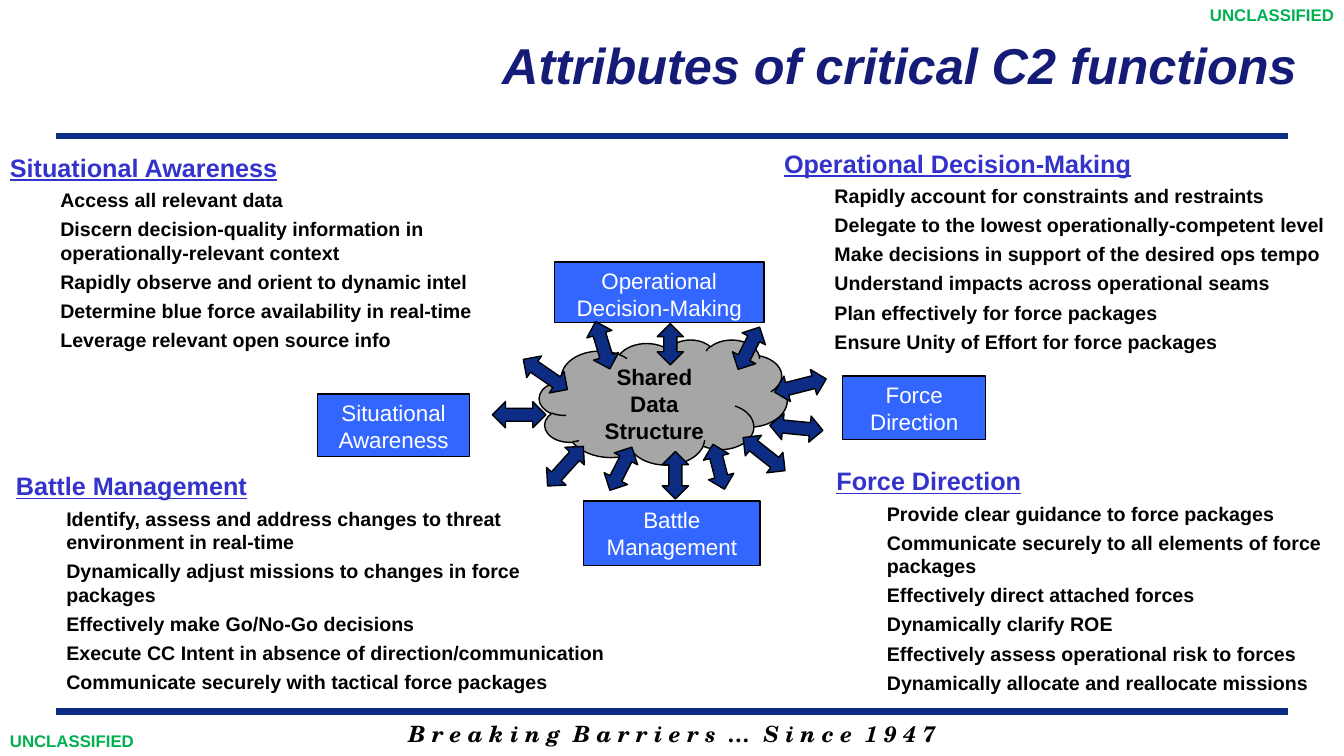
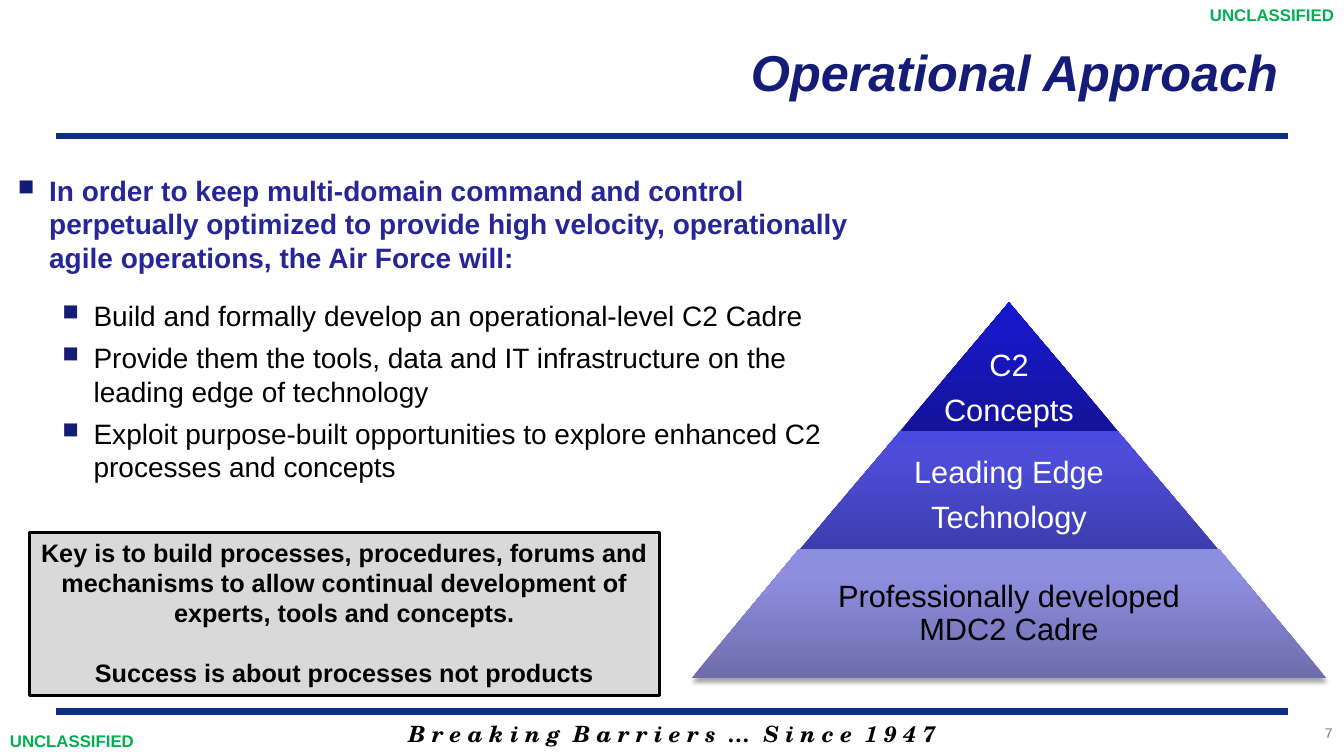
import copy
from dataclasses import dataclass

import pptx
import pptx.dml.color
import pptx.enum.shapes
import pptx.enum.text
import pptx.oxml
import pptx.oxml.ns
import pptx.util
from lxml import etree

RGBColor = pptx.dml.color.RGBColor
Shape = pptx.enum.shapes.MSO_SHAPE
Align = pptx.enum.text.PP_ALIGN
Anchor = pptx.enum.text.MSO_ANCHOR
Pt = pptx.util.Pt
qn = pptx.oxml.ns.qn

# Shared colours and fonts
BLACK = RGBColor(0x00, 0x00, 0x00)
WHITE = RGBColor(0xFF, 0xFF, 0xFF)
NAVY = RGBColor(0x0C, 0x2D, 0x83)
TITLE_BLUE = RGBColor(0x15, 0x1C, 0x77)
LEAD_BLUE = RGBColor(0x26, 0x26, 0x99)
HEADING_BLUE = RGBColor(0x33, 0x33, 0xCC)
BOX_BLUE = RGBColor(0x33, 0x66, 0xFF)
GREEN = RGBColor(0x00, 0xB0, 0x50)
CLOUD_GRAY = RGBColor(0xA6, 0xA6, 0xA6)
KEY_GRAY = RGBColor(0xD9, 0xD9, 0xD9)
NUMBER_GRAY = RGBColor(0x80, 0x80, 0x80)
SANS = "Arial"
SERIF = "TeX Gyre Schola"

# Grid of 80 columns by 45 rows of square cells
COLS, ROWS = 80, 45
CELL = pptx.util.Inches(1) / 6


@dataclass(frozen=True)
class Area:
    col: float
    row: float
    cols: float
    rows: float

    def emu(self) -> tuple[int, ...]:
        return tuple(cells(v) for v in (self.col, self.row, self.cols, self.rows))


@dataclass(frozen=True)
class Style:
    size: float
    color: RGBColor = BLACK
    bold: bool = False
    italic: bool = False
    underline: bool = False
    font: str = SANS
    align: Align = Align.LEFT


@dataclass(frozen=True)
class Para:
    text: str
    style: Style
    before: float = 0
    spacing: float = 1.0
    left: float = 0
    bullet: bool = False


@dataclass(frozen=True)
class Node:
    lines: tuple[str, ...]
    area: Area
    fill: RGBColor = BOX_BLUE
    shape: Shape = Shape.RECTANGLE
    style: Style = Style(16, WHITE, align=Align.CENTER)


@dataclass(frozen=True)
class Arrow:
    col: float  # centre
    row: float
    length: float
    angle: float


@dataclass(frozen=True)
class Topic:
    heading: str
    area: Area
    items: tuple[str, ...]


@dataclass(frozen=True)
class Tier:
    lines: tuple[str, ...]
    row: float
    half_top: float
    half_base: float
    inset: float
    stops: tuple[str, str, str]
    color: RGBColor = WHITE
    anchor: Anchor = Anchor.MIDDLE


TITLE = Style(36, TITLE_BLUE, bold=True, italic=True, align=Align.RIGHT)
HEADING = Style(18, HEADING_BLUE, bold=True, underline=True)
ITEM = Style(14, bold=True)
LEAD = Style(20, LEAD_BLUE, bold=True)
POINT = Style(20)
KEY = Style(18, bold=True, align=Align.CENTER)
MOTTO = Style(16, bold=True, italic=True, font=SERIF, align=Align.CENTER)

NODES = (
    Node(("Battle Management",), Area(34.74, 29.82, 10.5, 3.84)),
    Node(("Shared", "Data Structure"), Area(32.1, 20.22, 14.76, 7.44), CLOUD_GRAY,
         Shape.CLOUD, Style(16, bold=True, align=Align.CENTER)),
    Node(("Situational", "Awareness"), Area(18.9, 23.46, 9.06, 3.72)),
    Node(("Operational", "Decision-Making"), Area(33, 15.6, 12.48, 3.6)),
    Node(("Force", "Direction"), Area(50.16, 22.38, 8.52, 3.78)),
)

ARROW_WIDTH = 1.56
ARROWS = (
    Arrow(33.66, 27.75, 3.18, 42.1), Arrow(39.9, 20.49, 2.46, 0),
    Arrow(35.88, 20.55, 2.94, 343.2), Arrow(32.46, 22.29, 3.18, 124.4),
    Arrow(47.64, 22.95, 3.18, 75.7), Arrow(47.4, 25.47, 3.18, 95.5),
    Arrow(45.48, 27.03, 3.18, 128.3), Arrow(42.78, 27.78, 2.76, 165.6),
    Arrow(36.96, 27.9, 2.88, 27), Arrow(30.9, 24.69, 3.18, 90),
    Arrow(40.2, 28.29, 2.82, 180), Arrow(44.58, 20.73, 2.82, 27),
)

TOPICS = (
    Topic("Situational Awareness", Area(0, 8.76, 32.28, 12.66), (
        "Access all relevant data",
        "Discern decision-quality information in operationally-relevant context",
        "Rapidly observe and orient to dynamic intel",
        "Determine blue force availability in real-time",
        "Leverage relevant open source info")),
    Topic("Operational Decision-Making", Area(46.08, 8.52, 33.92, 13.02), (
        "Rapidly account for constraints and restraints",
        "Delegate to the lowest operationally-competent level",
        "Make decisions in support of the desired ops tempo",
        "Understand impacts across operational seams",
        "Plan effectively for force packages",
        "Ensure Unity of Effort for force packages")),
    Topic("Force Direction", Area(49.2, 27.42, 30.8, 14.46), (
        "Provide clear guidance to force packages",
        "Communicate securely to all elements of force packages",
        "Effectively direct attached forces",
        "Dynamically clarify ROE",
        "Effectively assess operational risk to forces",
        "Dynamically allocate and reallocate missions")),
    Topic("Battle Management", Area(0.36, 27.72, 36.6, 14.1), (
        "Identify, assess and address changes to threat environment in real-time",
        "Dynamically adjust missions to changes in force packages",
        "Effectively make Go/No-Go decisions",
        "Execute CC Intent in absence of direction/communication",
        "Communicate securely with tactical force packages")),
)

TIER_CENTER, TIER_ROWS = 60.06, 7.68
TIERS = (
    Tier(("C2", "Concepts"), 18, 0, 6.5, 0.18, ("13139A", "1818C7", "1515CC"),
         anchor=Anchor.BOTTOM),
    Tier(("Leading Edge", "Technology"), 25.68, 6.48, 13, 4.74,
         ("3B3BA8", "4D4DDA", "4A4ADE")),
    Tier(("Professionally developed MDC2 Cadre",), 32.7, 12.5, 18.9, 6.9,
         ("6D6DAC", "8E8EE0", "8D8DE2"), BLACK),
)

POINTS = (
    "Build and formally develop an operational-level C2 Cadre",
    "Provide them the tools, data and IT infrastructure on the leading edge of technology",
    "Exploit purpose-built opportunities to explore enhanced C2 processes and concepts",
)


def cells(n: float) -> int:
    return round(n * CELL)


def add_bullet(pPr) -> None:
    color = etree.SubElement(pPr, qn("a:buClr"))
    etree.SubElement(color, qn("a:srgbClr"), val=str(TITLE_BLUE))
    etree.SubElement(pPr, qn("a:buSzPct"), val="80000")
    etree.SubElement(pPr, qn("a:buChar"), char="■")


def write(tf, paras: list[Para], anchor: Anchor = Anchor.TOP) -> None:
    tf.word_wrap = True
    tf.vertical_anchor = anchor
    for i, para in enumerate(paras):
        p = tf.add_paragraph() if i else tf.paragraphs[0]
        p.text = para.text
        p.alignment = para.style.align
        p.line_spacing = para.spacing
        if para.before:
            p.space_before = Pt(para.before)
        pPr = p._p.get_or_add_pPr()
        if para.left:
            pPr.set("marL", str(pptx.util.Inches(para.left)))
        if para.bullet:
            pPr.set("indent", str(pptx.util.Inches(-0.31)))
            add_bullet(pPr)
        for r in p.runs:
            f, style = r.font, para.style
            f.name, f.size = style.font, Pt(style.size)
            f.bold, f.italic = style.bold, style.italic
            f.underline = style.underline
            f.color.rgb = style.color


def add_text(s, area: Area, paras: list[Para], anchor: Anchor = Anchor.TOP) -> None:
    write(s.shapes.add_textbox(*area.emu()).text_frame, paras, anchor)


def add_box(s, shape: Shape, area: Area, fill: RGBColor, line: float = 1):
    sp = s.shapes.add_shape(shape, *area.emu())
    sp.shadow.inherit = False
    sp.fill.solid()
    sp.fill.fore_color.rgb = fill
    sp.line.color.rgb = BLACK
    sp.line.width = Pt(line)
    return sp


def add_rule(s, row: float) -> None:
    line = s.shapes.add_connector(pptx.enum.shapes.MSO_CONNECTOR.STRAIGHT,
                                  cells(3.36), cells(row), cells(76.68), cells(row))
    line.line.color.rgb = NAVY
    line.line.width = Pt(4.5)
    etree.SubElement(line._element.spPr, qn("a:effectLst"))


def add_tier(s, tier: Tier) -> None:
    base = tier.row + TIER_ROWS
    corners = [(TIER_CENTER + dx, row) for dx, row in (
        (-tier.half_base, base), (-tier.half_top, tier.row),
        (tier.half_top, tier.row), (tier.half_base, base))]
    points = [(cells(x), cells(y)) for x, y in corners]
    builder = s.shapes.build_freeform(*points[0])
    builder.add_line_segments(points[1:], close=True)
    sp = builder.convert_to_shape()
    sp.line.fill.background()

    # Three-stop gradient, dark at the base
    sp.fill.gradient()
    sp.fill.gradient_angle = 90
    spPr = sp._element.spPr
    first = spPr.find(".//" + qn("a:gs"))
    first.addnext(copy.deepcopy(first))
    for stop, position, color in zip(sp.fill.gradient_stops, (0, 0.8, 1), tier.stops):
        stop.position = position
        stop.color.rgb = RGBColor.from_string(color)

    # Soft shadow below
    sp.shadow.inherit = False
    shadow = etree.SubElement(spPr.find(qn("a:effectLst")), qn("a:outerShdw"),
                              blurRad=str(Pt(3.1)), dist=str(Pt(1.8)),
                              dir="5400000", rotWithShape="0")
    black = etree.SubElement(shadow, qn("a:srgbClr"), val=str(BLACK))
    etree.SubElement(black, qn("a:alpha"), val="35000")

    tf = sp.text_frame
    tf.margin_left = tf.margin_right = cells(tier.inset)
    tf.margin_top = tf.margin_bottom = cells(0.18)
    style = Style(22, tier.color, align=Align.CENTER)
    write(tf, [Para(t, style, 8.5 if i else 0, 0.9) for i, t in enumerate(tier.lines)],
          tier.anchor)


def add_slide(prs, title: str, title_area: Area):
    """Blank slide with the shared motto, rules, markings and title."""
    s = prs.slides.add_slide(prs.slide_layouts[6])
    add_text(s, Area(11.34, 42.6, 57.36, 2.22),
             [Para("B r e a k i n g  B a r r i e r s  …  S i n c e  1 9 4 7", MOTTO)])
    for row in (42.36, 8.1):
        add_rule(s, row)
    for col, row, align in ((0, 43.2, Align.LEFT), (62.66, 0, Align.RIGHT)):
        add_text(s, Area(col, row, 17.34, 1.8),
                 [Para("UNCLASSIFIED", Style(12, GREEN, bold=True, align=align))])
    add_text(s, title_area, [Para(title, TITLE)], Anchor.MIDDLE)
    return s


def build_attributes(prs) -> None:
    s = add_slide(prs, "Attributes of critical C2 functions", Area(23.4, 0.06, 54.42, 7.5))
    for node in NODES:
        sp = add_box(s, node.shape, node.area, node.fill)
        write(sp.text_frame, [Para(t, node.style) for t in node.lines])
    for a in ARROWS:
        area = Area(a.col - ARROW_WIDTH / 2, a.row - a.length / 2, ARROW_WIDTH, a.length)
        add_box(s, Shape.UP_DOWN_ARROW, area, NAVY).rotation = a.angle
    for topic in TOPICS:
        add_text(s, topic.area, [Para(topic.heading, HEADING)] + [
            Para(t, ITEM, before=4, left=0.5) for t in topic.items])


def build_approach(prs) -> None:
    s = add_slide(prs, "Operational Approach", Area(14.16, 0.48, 62.52, 7.5))
    lead = Para("In order to keep multi-domain command and control perpetually optimized "
                "to provide high velocity, operationally agile operations, "
                "the Air Force will:", LEAD, left=0.31, bullet=True)
    add_text(s, Area(0.48, 10.02, 51.18, 12.78), [lead] + [
        Para(t, POINT, before=6 if i else 17.5, left=0.75, bullet=True)
        for i, t in enumerate(POINTS)])
    add_text(s, Area(69.9, 42.84, 10.02, 1.98),
             [Para("7", Style(10, NUMBER_GRAY, align=Align.RIGHT))])
    for tier in TIERS:
        add_tier(s, tier)
    key = add_box(s, Shape.RECTANGLE, Area(1.74, 31.68, 37.5, 9.72), KEY_GRAY, 2.25)
    write(key.text_frame, [
        Para("Key is to build processes, procedures, forums and mechanisms to allow "
             "continual development of experts, tools and concepts.", KEY),
        Para("Success is about processes not products", KEY, before=21)])


def main() -> None:
    prs = pptx.Presentation()
    prs.slide_width, prs.slide_height = cells(COLS), cells(ROWS)
    build_attributes(prs)
    build_approach(prs)
    prs.save("out.pptx")


if __name__ == "__main__":
    main()
